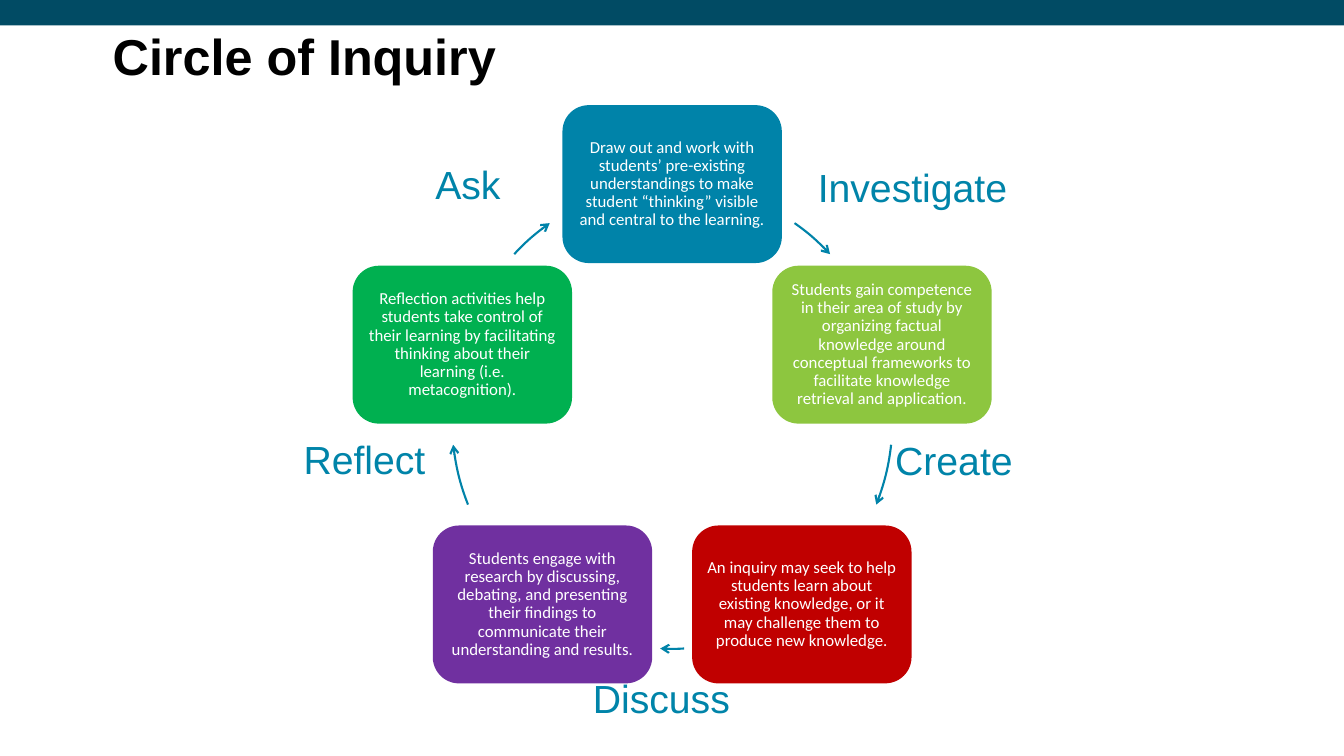
import math

import pptx
import pptx.dml.color
import pptx.enum.shapes
import pptx.enum.text
import pptx.oxml
import pptx.oxml.ns
import pptx.util

Cm = pptx.util.Cm
Pt = pptx.util.Pt
RGBColor = pptx.dml.color.RGBColor
SHAPE = pptx.enum.shapes.MSO_SHAPE
ANCHOR = pptx.enum.text.MSO_ANCHOR
ALIGN = pptx.enum.text.PP_ALIGN

DARK_TEAL = RGBColor(0x01, 0x4B, 0x64)
BLUE = RGBColor(0x00, 0x83, 0xA9)
LABEL_BLUE = RGBColor(0x00, 0x84, 0xA9)
LIME = RGBColor(0x8D, 0xC6, 0x3F)
RED = RGBColor(0xC0, 0x00, 0x00)
PURPLE = RGBColor(0x70, 0x30, 0xA0)
GREEN = RGBColor(0x00, 0xB0, 0x50)
BLACK = RGBColor(0x00, 0x00, 0x00)
WHITE = RGBColor(0xFF, 0xFF, 0xFF)

TITLE_FONT = {"name": "Arial", "size": Pt(36), "bold": True}
STAGE_FONT = {"name": "Calibri", "size": Pt(12)}
LABEL_FONT = {"name": "Arial", "size": Pt(28)}

# Clockwise from the top of the ring
STAGES = [
    (BLUE, "Draw out and work with students’ pre-existing understandings to make "
           "student “thinking” visible and central to the learning."),
    (LIME, "Students gain competence in their area of study by organizing factual "
           "knowledge around conceptual frameworks to facilitate knowledge "
           "retrieval and application."),
    (RED, "An inquiry may seek to help students learn about existing knowledge, "
          "or it may challenge them to produce new knowledge."),
    (PURPLE, "Students engage with research by discussing, debating, and presenting "
             "their findings to communicate their understanding and results."),
    (GREEN, "Reflection activities help students take control of their learning by "
            "facilitating thinking about their learning (i.e. metacognition)."),
]
STAGE_WIDTH, STAGE_HEIGHT = 5.53, 3.98

# Start and end angles of the arrows, in degrees clockwise from the top
ARROWS = [(33.7, 45.7), (97, 112.3), (176.9, 183.1), (247.7, 263), (314.3, 326.3)]

# Left and top from the corner of the ring, and width, in cm
LABELS = [
    ("Ask", -0.66, -0.73, 2.36),
    ("Investigate", 8.98, -0.65, 6.32),
    ("Create", 10.93, 6.23, 3.84),
    ("Discuss", 3.31, 12.23, 5.16),
    ("Reflect", -3.98, 6.21, 3.86),
]
LABEL_HEIGHT = 1.52


def write_text(shape, text, font, color, inset=None, **paragraph_format):
    frame = shape.text_frame
    frame.word_wrap = True
    if inset is not None:
        for side in ("left", "top", "right", "bottom"):
            setattr(frame, f"margin_{side}", Cm(inset))
    paragraph = frame.paragraphs[0]
    paragraph.text = text
    for name, value in paragraph_format.items():
        setattr(paragraph, name, value)
    for name, value in font.items():
        setattr(paragraph.font, name, value)
    paragraph.font.color.rgb = color


def add_filled_shape(slide, kind, box, color):
    shape = slide.shapes.add_shape(kind, *map(Cm, box))
    shape.shadow.inherit = False
    shape.fill.solid()
    shape.fill.fore_color.rgb = color
    shape.line.fill.background()
    return shape


def add_header(slide, box):
    left, top, width, height = box
    add_filled_shape(slide, SHAPE.RECTANGLE, (left, top, width, 0.64), DARK_TEAL)
    title = slide.shapes.add_textbox(
        Cm(left + 2.84), Cm(top + 0.81), Cm(width - 5.09), Cm(height - 0.81))
    write_text(title, "Circle of Inquiry", TITLE_FONT, BLACK, inset=0, line_spacing=0.9)


def ring_point(box, angle, tangent=0):
    """Point on the ring, moved along its tangent by a share of the radius."""
    left, top, width, height = box
    sine, cosine = math.sin(math.radians(angle)), math.cos(math.radians(angle))
    return (left + width / 2 * (1 + sine + tangent * cosine),
            top + height / 2 * (1 - cosine + tangent * sine))


def add_arc_arrow(slide, box, start, end):
    left, top, width, height = box
    handle = 4 / 3 * math.tan(math.radians(end - start) / 4)
    first, *curve = [
        tuple(map(Cm, ring_point(box, angle, tangent)))
        for angle, tangent in [(start, 0), (start, handle), (end, -handle), (end, 0)]
    ]
    # Two opposite corners give the arrow the frame of the whole ring
    builder = slide.shapes.build_freeform(Cm(left), Cm(top))
    builder.move_to(Cm(left + width), Cm(top + height))
    builder.move_to(*first)
    builder.add_line_segments(curve, close=False)
    arrow = builder.convert_to_shape()

    # Drop the corner moves and bend the segments into one curve
    qn = pptx.oxml.ns.qn
    outline = next(arrow.element.iter(qn("a:path")))
    for corner in outline.findall(qn("a:moveTo"))[:2]:
        outline.remove(corner)
    bend = pptx.oxml.parse_xml(f'<a:cubicBezTo {pptx.oxml.ns.nsdecls("a")}/>')
    for segment in outline.findall(qn("a:lnTo")):
        bend.append(segment[0])
        outline.remove(segment)
    outline.append(bend)

    arrow.shadow.inherit = False
    arrow.fill.background()
    arrow.line.color.rgb = BLUE
    arrow.line.width = Pt(1.5)
    head = pptx.oxml.parse_xml(
        f'<a:tailEnd {pptx.oxml.ns.nsdecls("a")} type="arrow"/>')
    next(arrow.element.iter(qn("a:ln"))).append(head)


def add_inquiry_ring(slide, box):
    # Stages and the arrows that follow them
    for index, ((color, text), (start, end)) in enumerate(zip(STAGES, ARROWS)):
        x, y = ring_point(box, index * 360 / len(STAGES))
        stage_box = (x - STAGE_WIDTH / 2, y - STAGE_HEIGHT / 2, STAGE_WIDTH, STAGE_HEIGHT)
        stage = add_filled_shape(slide, SHAPE.ROUNDED_RECTANGLE, stage_box, color)
        write_text(stage, text, STAGE_FONT, WHITE, inset=0.13,
                   alignment=ALIGN.CENTER, line_spacing=0.9)
        stage.text_frame.vertical_anchor = ANCHOR.MIDDLE
        add_arc_arrow(slide, box, start, end)

    # Step names around the ring
    for text, x, y, width in LABELS:
        label = slide.shapes.add_textbox(
            Cm(box[0] + x), Cm(box[1] + y), Cm(width), Cm(LABEL_HEIGHT))
        write_text(label, text, LABEL_FONT, LABEL_BLUE)


def main():
    presentation = pptx.Presentation()
    presentation.slide_width = Cm(33.87)
    presentation.slide_height = Cm(19.05)
    slide = presentation.slides.add_slide(presentation.slide_layouts[6])
    add_header(slide, (0, 0, 33.87, 5.26))
    add_inquiry_ring(slide, (11.38, 4.64, 11.12, 11.71))
    presentation.save("out.pptx")


if __name__ == "__main__":
    main()
